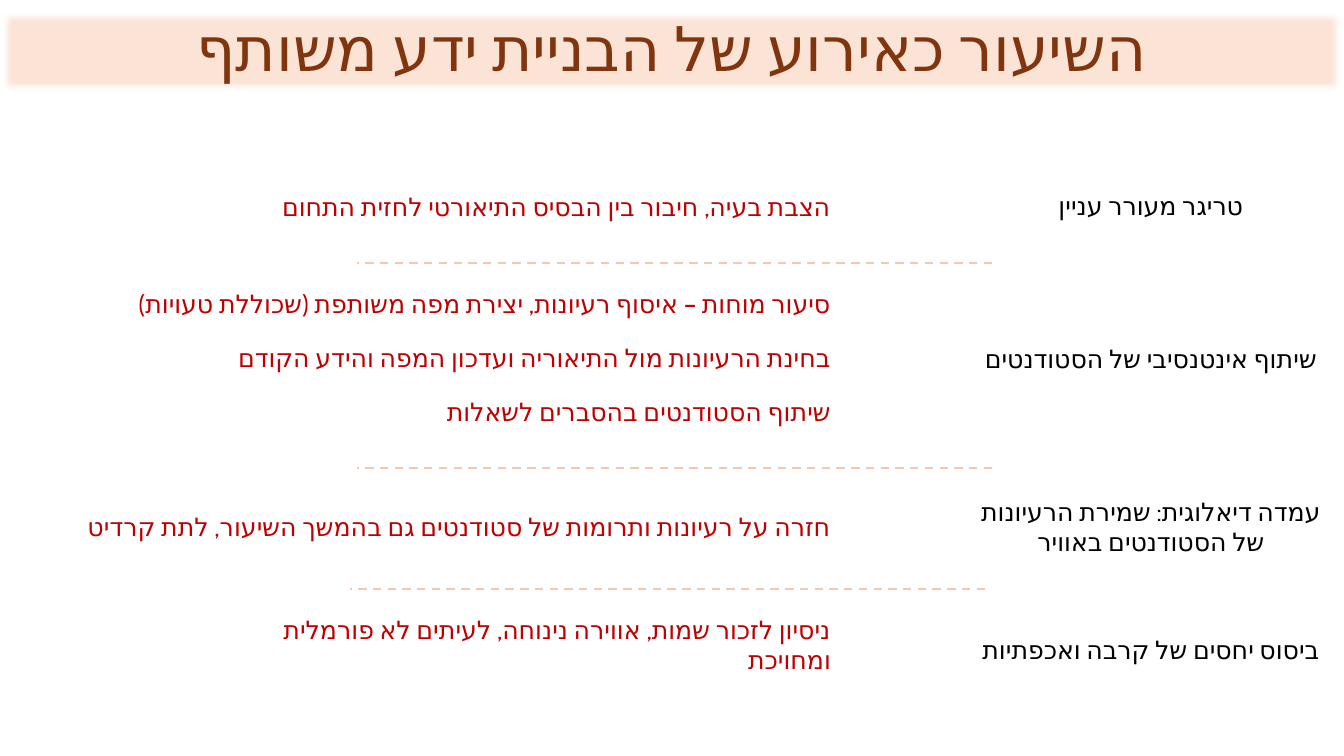
"""Build a Hebrew slide on the lesson as an event of shared knowledge building."""
import pptx
import pptx.dml.color
import pptx.enum.dml
import pptx.enum.shapes
import pptx.enum.text
import pptx.oxml.ns
import pptx.util
from lxml import etree
from pptx.util import Inches

TITLE = "השיעור כאירוע של הבניית ידע משותף"

# label: (text, top, width); answers: (text, top, width, height)
SECTIONS = [
    {"label": ("טריגר מעורר עניין", 1.79, 3.19),
     "answers": [("הצבת בעיה, חיבור בין הבסיס התיאורטי לחזית התחום", 1.79, 7.12, 0.52)]},
    {"label": ("שיתוף אינטנסיבי של הסטודנטים", 3.31, 3.79),
     "answers": [("סיעור מוחות – איסוף רעיונות, יצירת מפה משותפת (שכוללת טעויות)", 2.77, 8.36, 0.48),
                 ("בחינת הרעיונות מול התיאוריה ועדכון המפה והידע הקודם", 3.31, 8.47, 0.48),
                 ("שיתוף הסטודנטים בהסברים לשאלות", 3.84, 8.36, 0.48)]},
    {"label": ("עמדה דיאלוגית: שמירת הרעיונות של הסטודנטים באוויר", 4.97, 3.79),
     "answers": [("חזרה על רעיונות ותרומות של סטודנטים גם בהמשך השיעור, לתת קרדיט", 4.97, 8.34, 0.5)]},
    {"label": ("ביסוס יחסים של קרבה ואכפתיות", 6.19, 3.79),
     "answers": [("ניסיון לזכור שמות, אווירה נינוחה, לעיתים לא פורמלית ומחויכת", 6.14, 6.53, 0.5)]},
]
DIVIDERS = [(9.84, 2.61), (9.84, 4.64), (9.77, 5.84)]

SLIDE_W, SLIDE_H = 13.33, 7.5
LABEL_CENTER, LABEL_H = 11.415, 0.5
ANSWER_RIGHT, DIVIDER_W = 8.365, 6.3

THEME = {
    "title_font": "Calibri", "title_size": 44, "title": "80350E", "band": "FBE3D6",
    "body_font": "Cabin", "body_size": 18, "label": "000000", "answer": "C00000",
    "divider": "F6C6AD", "divider_width": 1.5, "soft_edge": Inches(0.07),
}
SHAPE = pptx.enum.shapes.MSO_SHAPE
ALIGN = pptx.enum.text.PP_ALIGN


def rgb(name):
    return pptx.dml.color.RGBColor.from_string(THEME[name])


def add_effects(sp):
    return etree.SubElement(sp._element.spPr, pptx.oxml.ns.qn("a:effectLst"))


def add_text_shape(slide, kind, box, text, role, style, align):
    sp = slide.shapes.add_shape(kind, *map(Inches, box))
    sp.fill.background()
    sp.line.fill.background()
    sp.shadow.inherit = False
    tf = sp.text_frame
    tf.word_wrap = True
    tf.vertical_anchor = pptx.enum.text.MSO_ANCHOR.MIDDLE
    p = tf.paragraphs[0]
    p.alignment = align
    p._p.get_or_add_pPr().set("rtl", "1")
    r = p.add_run()
    r.text = text
    r.font.name = THEME[style + "_font"]
    r.font.size = pptx.util.Pt(THEME[style + "_size"])
    r.font.color.rgb = rgb(role)
    r.font.language_id = pptx.enum.lang.MSO_LANGUAGE_ID.HEBREW
    cs = etree.SubElement(r._r.rPr, pptx.oxml.ns.qn("a:cs"))
    cs.set("typeface", THEME[style + "_font"])
    return sp


def add_title(slide):
    sp = add_text_shape(slide, SHAPE.RECTANGLE, (0, 0.09, SLIDE_W, 0.84),
                        TITLE, "title", "title", ALIGN.CENTER)
    sp.fill.solid()
    sp.fill.fore_color.rgb = rgb("band")
    sp.text_frame.paragraphs[0].line_spacing = 0.9
    effects = sp._element.spPr.find(pptx.oxml.ns.qn("a:effectLst"))
    soft = etree.SubElement(effects, pptx.oxml.ns.qn("a:softEdge"))
    soft.set("rad", str(int(THEME["soft_edge"])))


def add_section(slide, section):
    text, top, width = section["label"]
    add_text_shape(slide, SHAPE.ROUNDED_RECTANGLE,
                   (LABEL_CENTER - width / 2, top, width, LABEL_H),
                   text, "label", "body", ALIGN.CENTER)
    for text, top, width, height in section["answers"]:
        add_text_shape(slide, SHAPE.ROUNDED_RECTANGLE,
                       (ANSWER_RIGHT - width, top, width, height),
                       text, "answer", "body", ALIGN.RIGHT)


def add_divider(slide, right, y):
    line = slide.shapes.add_connector(
        pptx.enum.shapes.MSO_CONNECTOR.STRAIGHT,
        Inches(right), Inches(y), Inches(right - DIVIDER_W), Inches(y))
    line.line.color.rgb = rgb("divider")
    line.line.width = pptx.util.Pt(THEME["divider_width"])
    line.line.dash_style = pptx.enum.dml.MSO_LINE.DASH
    add_effects(line)


def main():
    prs = pptx.Presentation()
    prs.slide_width, prs.slide_height = Inches(SLIDE_W), Inches(SLIDE_H)
    slide = prs.slides.add_slide(prs.slide_layouts[6])
    add_title(slide)
    for section in SECTIONS:
        add_section(slide, section)
    for right, y in DIVIDERS:
        add_divider(slide, right, y)
    prs.save("out.pptx")


if __name__ == "__main__":
    main()
